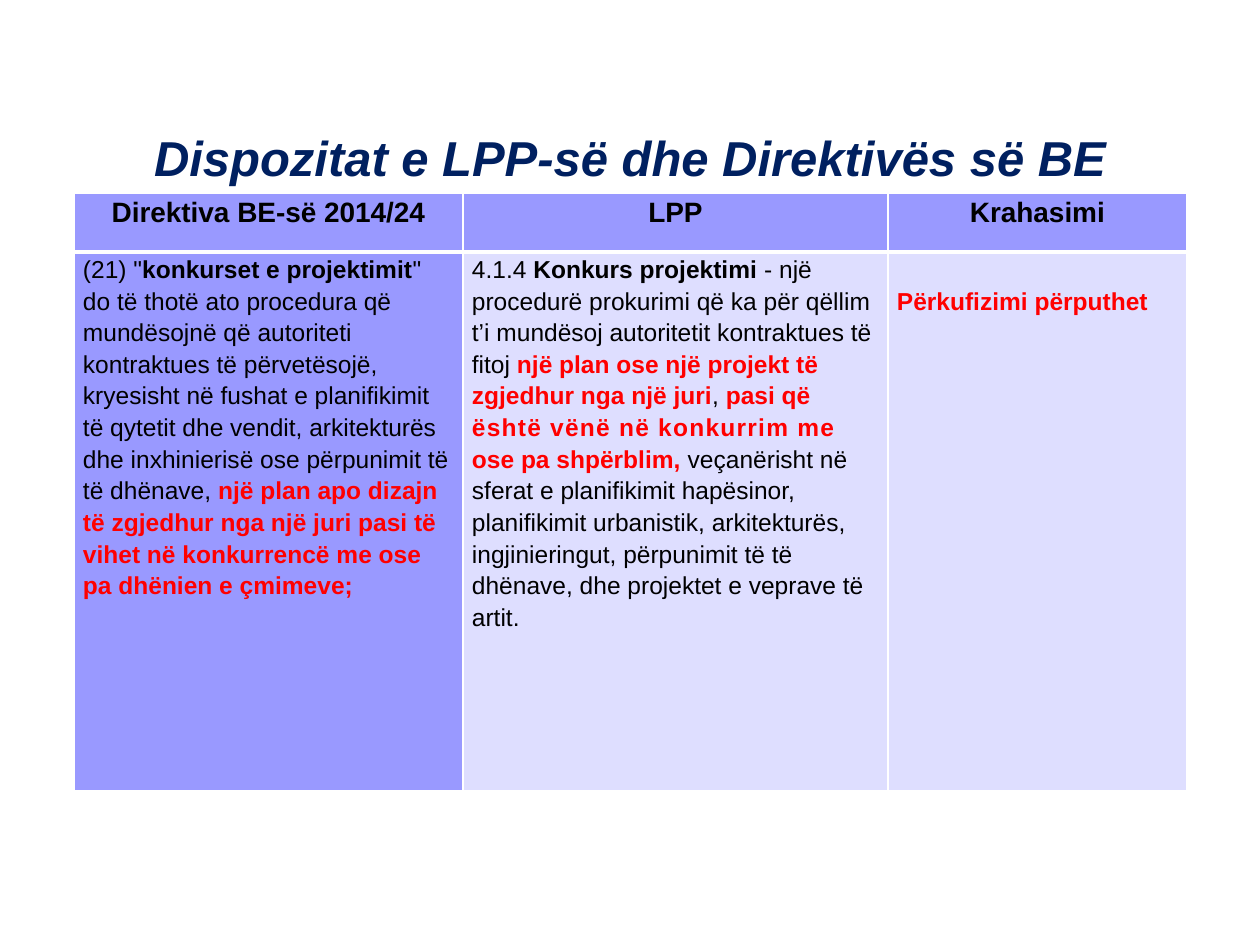
from dataclasses import dataclass

from lxml.etree import SubElement
from pptx import Presentation
from pptx.dml.color import RGBColor as RGB
from pptx.enum.text import MSO_ANCHOR as Anchor, PP_ALIGN as Align
from pptx.oxml.ns import qn
from pptx.util import Emu, Pt


@dataclass(frozen=True)
class Theme:
    font: str = "Arial"
    title: str = "002060"
    ink: str = "000000"
    accent: str = "FF0000"
    strong: str = "9999FF"
    pale: str = "DEDEFF"
    border: str = "FFFFFF"
    title_pt: int = 28
    head_pt: int = 16
    body_pt: int = 14
    thin_pt: int = 1
    thick_pt: int = 3


@dataclass(frozen=True)
class Span:
    text: str
    bold: bool = False
    color: str = Theme.ink
    spacing: int = 0


@dataclass(frozen=True)
class Column:
    width: int
    heading: str
    spans: tuple[Span, ...]
    fill: str = Theme.pale
    top: int = 0
    align: Align = Align.LEFT


T = Theme()
PX_PER_INCH = 126
TABLE_LEFT, TABLE_TOP = 74, 193
ROW_HEIGHTS = (59, 539)

COLUMNS = (
    Column(389, "Direktiva BE-së 2014/24", (
        Span('(21) "'),
        Span("konkurset e projektimit", bold=True),
        Span('" do të thotë ato procedura që mundësojnë që autoriteti '
             "kontraktues të përvetësojë, kryesisht në fushat e planifikimit "
             "të qytetit dhe vendit, arkitekturës dhe inxhinierisë ose "
             "përpunimit të të dhënave, "),
        Span("një plan apo dizajn të zgjedhur nga një juri pasi të vihet në "
             "konkurrencë me ose pa dhënien e çmimeve;", True, T.accent),
    ), fill=T.strong),
    Column(425, "LPP", (
        Span("4.1.4 "),
        Span("Konkurs projektimi ", bold=True),
        Span("- një procedurë prokurimi që ka për qëllim t’i mundësoj "
             "autoritetit kontraktues të fitoj "),
        Span("një plan ose një projekt të zgjedhur nga një juri", True, T.accent),
        Span(", "),
        Span("pasi që ", True, T.accent),
        Span("është vënë në konkurrim me ", True, T.accent, spacing=70),
        Span("ose pa shpërblim, ", True, T.accent),
        Span("veçanërisht në sferat e planifikimit hapësinor, planifikimit "
             "urbanistik, arkitekturës, ingjinieringut, përpunimit të të "
             "dhënave, dhe projektet e veprave të artit."),
    )),
    Column(299, "Krahasimi", (
        Span("Përkufizimi përputhet", True, T.accent),
    ), top=32, align=Align.JUSTIFY),
)


def px(n: int) -> Emu:
    return Emu(round(n * 914400 / PX_PER_INCH))


def add_text(p, text: str, *, size: int, color: str = T.ink, bold: bool = False,
             italic: bool = False, spacing: int = 0) -> None:
    r = p.add_run()
    r.text = text
    f = r.font
    f.name, f.size, f.bold, f.italic = T.font, Pt(size), bold, italic
    f.color.rgb = RGB.from_string(color)
    if spacing:
        r._r.get_or_add_rPr().set("spc", str(spacing))


def add_border(cell, side: str, width: int) -> None:
    ln = SubElement(cell._tc.get_or_add_tcPr(), qn(f"a:ln{side}"), w=str(Pt(width)))
    SubElement(SubElement(ln, qn("a:solidFill")), qn("a:srgbClr"), val=T.border)


def fill_cell(cell, spans: tuple[Span, ...], *, size: int, fill: str,
              align: Align, borders: dict[str, int], top: int = 0) -> None:
    for side, width in borders.items():
        add_border(cell, side, width)
    cell.fill.solid()
    cell.fill.fore_color.rgb = RGB.from_string(fill)
    cell.margin_left = cell.margin_right = px(9)
    cell.margin_top, cell.margin_bottom = px(top), 0
    p = cell.text_frame.paragraphs[0]
    p.alignment, p.line_spacing = align, 1.15
    for span in spans:
        add_text(p, span.text, size=size, color=span.color, bold=span.bold,
                 spacing=span.spacing)


def add_title(s, text: str) -> None:
    tf = s.shapes.add_textbox(px(64), px(69), px(1132), px(124)).text_frame
    tf.word_wrap = True
    tf.vertical_anchor = Anchor.BOTTOM
    p = tf.paragraphs[0]
    p.alignment = Align.CENTER
    add_text(p, text, size=T.title_pt, color=T.title, bold=True, italic=True)


def add_comparison(s, columns: tuple[Column, ...]) -> None:
    width = sum(c.width for c in columns)
    table = s.shapes.add_table(len(ROW_HEIGHTS), len(columns), px(TABLE_LEFT),
                               px(TABLE_TOP), px(width), px(sum(ROW_HEIGHTS))).table
    for row, height in zip(table.rows, ROW_HEIGHTS):
        row.height = px(height)
    for i, c in enumerate(columns):
        table.columns[i].width = px(c.width)
        fill_cell(table.cell(0, i), (Span(c.heading, bold=True),), size=T.head_pt,
                  fill=T.strong, align=Align.CENTER,
                  borders=dict(L=T.thin_pt, R=T.thin_pt, T=T.thin_pt, B=T.thick_pt))
        fill_cell(table.cell(1, i), c.spans, size=T.body_pt, fill=c.fill,
                  align=c.align, top=c.top,
                  borders=dict(L=T.thin_pt, R=T.thin_pt, T=T.thick_pt, B=T.thin_pt))


def main() -> None:
    prs = Presentation()
    prs.slide_width, prs.slide_height = px(1260), px(945)
    s = prs.slides.add_slide(prs.slide_layouts[6])
    add_title(s, "Dispozitat e LPP-së dhe Direktivës së BE")
    add_comparison(s, COLUMNS)
    prs.save("out.pptx")


if __name__ == "__main__":
    main()
